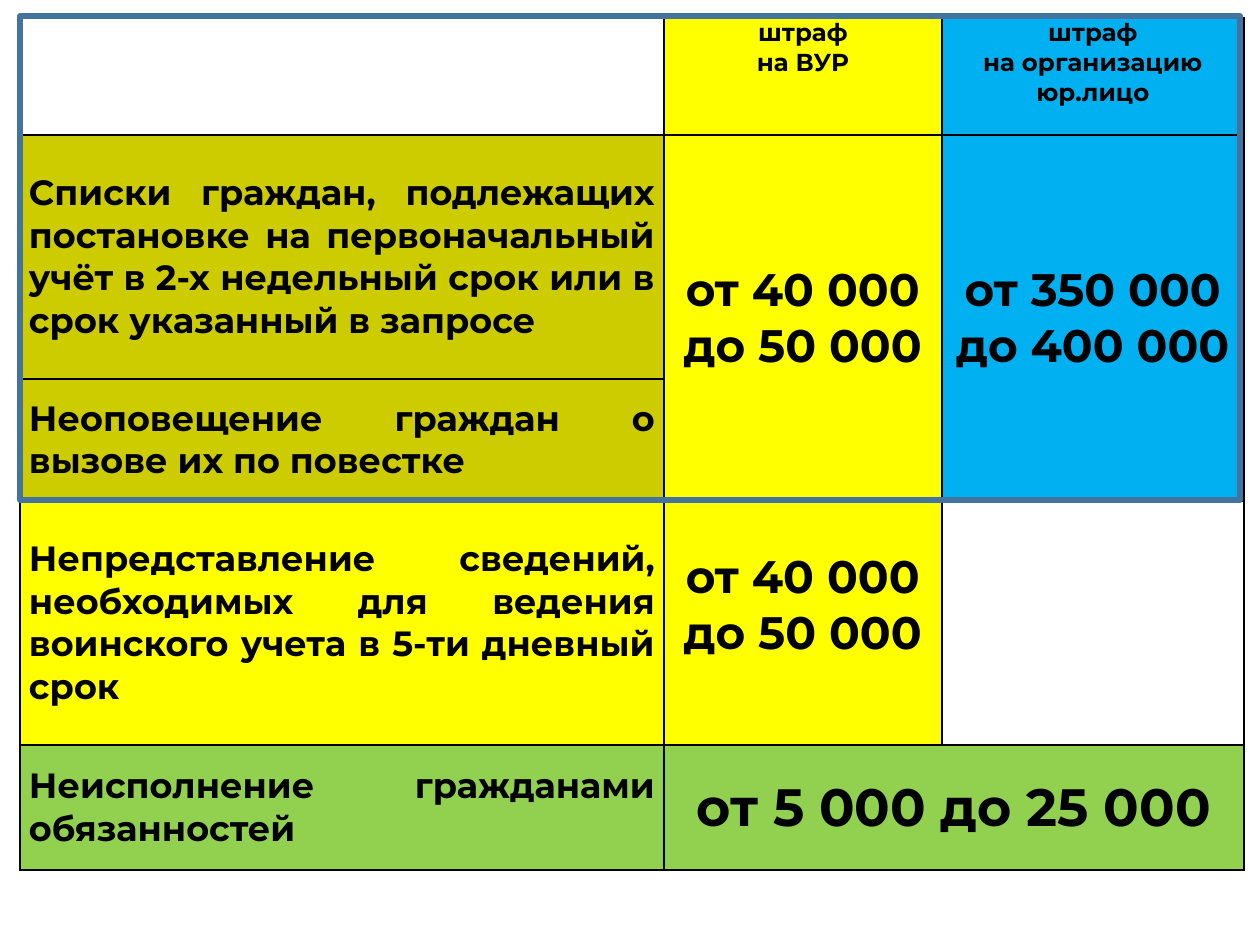
from lxml import etree
from pptx import Presentation
from pptx.dml.color import RGBColor
from pptx.enum.shapes import MSO_SHAPE as SHAPE
from pptx.enum.text import MSO_ANCHOR as ANCHOR, PP_ALIGN as ALIGN
from pptx.oxml.ns import qn
from pptx.util import Pt

PX = 914400 // 126
FONT = "Montserrat"
COLORS = {"black": "000000", "yellow": "FFFF00", "blue": "00B0F0",
          "olive": "CCCC00", "green": "92D050", "frame": "43739E"}


def rgb(name):
    return RGBColor.from_string(COLORS[name])


def add_borders(cell):
    tcPr = cell._tc.get_or_add_tcPr()
    for side in ("lnL", "lnR", "lnT", "lnB"):
        ln = etree.SubElement(tcPr, qn(f"a:{side}"), w=str(Pt(1)))
        fill = etree.SubElement(ln, qn("a:solidFill"))
        etree.SubElement(fill, qn("a:srgbClr"), val=COLORS["black"])


prs = Presentation()
prs.slide_width, prs.slide_height = 1260 * PX, 945 * PX
s = prs.slides.add_slide(prs.slide_layouts[6])

# Table grid
cols = [644, 278, 302]
rows = [117, 244, 122, 244, 125]
table = s.shapes.add_table(len(rows), len(cols), 20 * PX, 18 * PX,
                           sum(cols) * PX, sum(rows) * PX).table
table.first_row = table.horz_banding = False
for col, width in zip(table.columns, cols):
    col.width = width * PX
for row, height in zip(table.rows, rows):
    row.height = height * PX
for cell in table.iter_cells():
    add_borders(cell)
    cell.fill.background()
    cell.margin_left = cell.margin_right = 9 * PX
    cell.margin_top = cell.margin_bottom = 0

# Merged fines: two shared by the first two offences, one across both columns
table.cell(1, 1).merge(table.cell(2, 1))
table.cell(1, 2).merge(table.cell(2, 2))
table.cell(4, 1).merge(table.cell(4, 2))

# Cell contents: row, column, fill, font size, paragraphs
contents = [
    (0, 1, "yellow", 14, ["штраф", "на ВУР"]),
    (0, 2, "blue", 14, ["штраф", "на организацию", "юр.лицо"]),
    (1, 0, "olive", 20, ["Списки граждан, подлежащих постановке на первоначальный "
                         "учёт в 2-х недельный срок или в срок указанный в запросе"]),
    (1, 1, "yellow", 26, ["от 40 000", "до 50 000"]),
    (1, 2, "blue", 26, ["от 350 000", "до 400 000"]),
    (2, 0, "olive", 20, ["Неоповещение граждан о вызове их по повестке"]),
    (3, 0, "yellow", 20, ["Непредставление сведений, необходимых для ведения "
                          "воинского учета в 5-ти дневный срок"]),
    (3, 1, "yellow", 26, ["от 40 000", "до 50 000"]),
    (4, 0, "green", 20, ["Неисполнение гражданами обязанностей"]),
    (4, 1, "green", 30, ["от 5 000 до 25 000"]),
]
for row, col, color, size, lines in contents:
    cell = table.cell(row, col)
    cell.fill.solid()
    cell.fill.fore_color.rgb = rgb(color)
    cell.vertical_anchor = ANCHOR.MIDDLE if row else ANCHOR.TOP
    tf = cell.text_frame
    tf.text = "\n".join(lines)
    for p in tf.paragraphs:
        p.alignment = ALIGN.CENTER if col else ALIGN.JUSTIFY
        p.font.name, p.font.size, p.font.bold = FONT, Pt(size), True
        p.font.color.rgb = rgb("black")
table.cell(3, 1).margin_bottom = 36 * PX  # this fine sits above the middle

# Frame around the offences that also fine the organisation
sp = s.shapes.add_shape(SHAPE.RECTANGLE, 20 * PX, 16 * PX, 1220 * PX, 484 * PX)
sp.shadow.inherit = False
sp.fill.background()
sp.line.color.rgb = rgb("frame")
sp.line.width = Pt(3)

prs.save("out.pptx")
